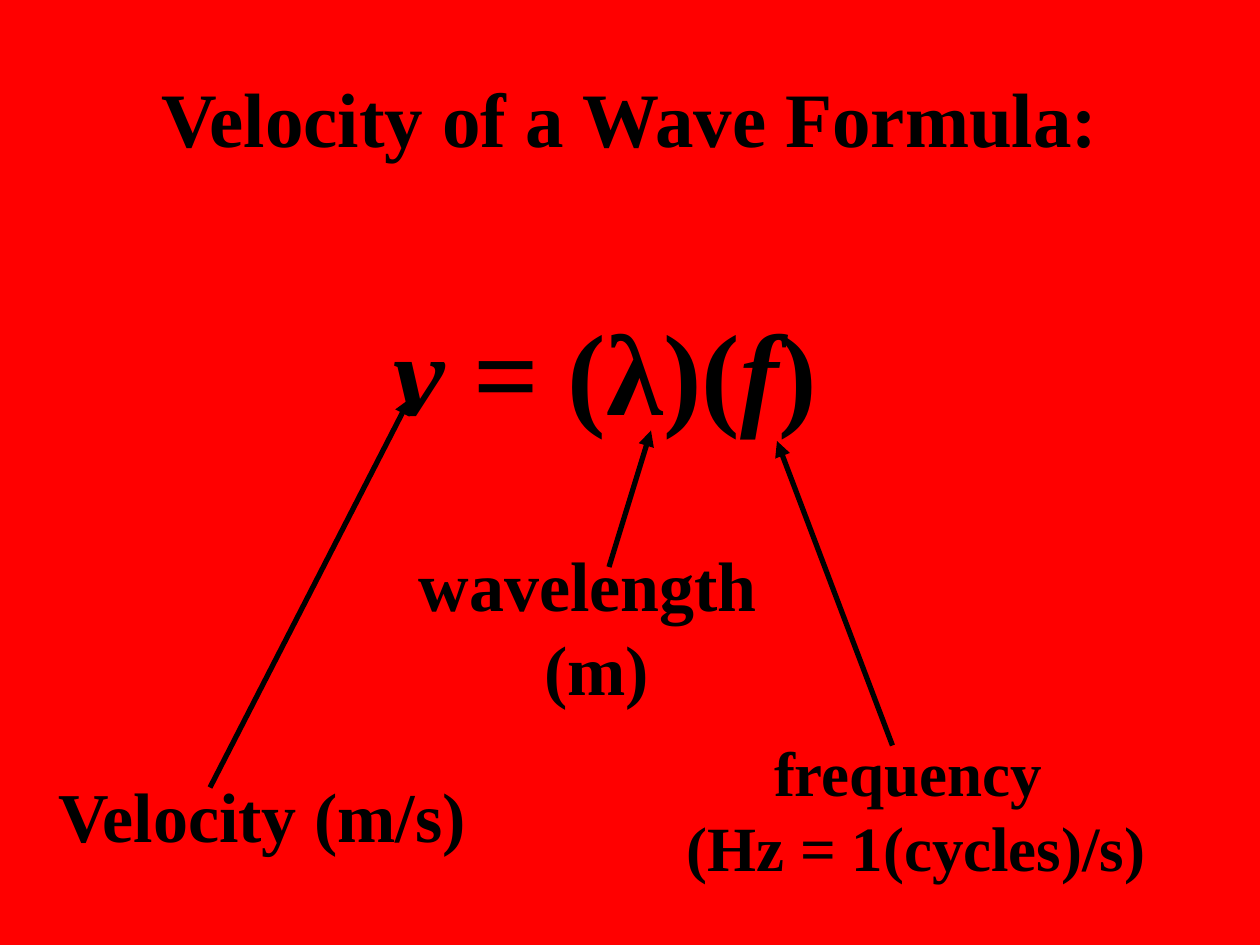
from lxml import etree
from pptx import Presentation
from pptx.dml.color import RGBColor
from pptx.enum.shapes import MSO_CONNECTOR
from pptx.enum.text import MSO_ANCHOR, PP_ALIGN
from pptx.oxml.ns import qn
from pptx.util import Emu, Pt

PX = 9525  # 96 px to the inch
COLORS = {"background": "FF0000", "ink": "000000"}
FONT = "Times New Roman"


def px(n):
    return Emu(n * PX)


def rgb(name):
    return RGBColor.from_string(COLORS[name])


class WaveSlide:
    def __init__(self, prs):
        self.s = prs.slides.add_slide(prs.slide_layouts[6])
        fill = self.s.background.fill
        fill.solid()
        fill.fore_color.rgb = rgb("background")

    def text(self, box, lines, size, anchor=MSO_ANCHOR.TOP):
        """Add centred bold lines; each line is a list of (text, italic) runs."""
        tf = self.s.shapes.add_textbox(*map(px, box)).text_frame
        tf.word_wrap = True
        tf.vertical_anchor = anchor
        for i, runs in enumerate(lines):
            p = tf.add_paragraph() if i else tf.paragraphs[0]
            p.alignment = PP_ALIGN.CENTER
            for text, italic in runs:
                r = p.add_run()
                r.text = text
                font = r.font
                font.name, font.size = FONT, Pt(size)
                font.bold, font.italic = True, italic
                font.color.rgb = rgb("ink")

    def label(self, box, lines, size, anchor=MSO_ANCHOR.TOP):
        self.text(box, [[(line, False)] for line in lines], size, anchor)

    def arrow(self, x1, y1, x2, y2):
        line = self.s.shapes.add_connector(
            MSO_CONNECTOR.STRAIGHT, px(x1), px(y1), px(x2), px(y2))
        line.line.color.rgb = rgb("ink")
        line.line.width = Pt(3)
        ln = line.line._get_or_add_ln()
        etree.SubElement(ln, qn("a:tailEnd"), type="triangle")
        etree.SubElement(line._element.spPr, qn("a:effectLst"))


def main():
    prs = Presentation()
    prs.slide_width, prs.slide_height = px(960), px(720)
    slide = WaveSlide(prs)

    slide.label((48, 29, 864, 120), ["Velocity of a Wave Formula:"], 44,
                MSO_ANCHOR.MIDDLE)
    slide.text((176, 224, 592, 116),
               [[("v", True), (" = (λ)(", False), ("f", True), (") ", False)]], 66)

    slide.label((432, 554, 520, 126), ["frequency", " (Hz = 1(cycles)/s)"], 36)
    slide.label((24, 584, 352, 74), ["Velocity (m/s)"], 40)
    slide.arrow(160, 600, 312, 304)
    slide.arrow(680, 568, 592, 336)
    slide.label((208, 408, 480, 139), ["wavelength", " (m)"], 40)
    slide.arrow(464, 432, 496, 328)

    prs.save("out.pptx")


if __name__ == "__main__":
    main()
